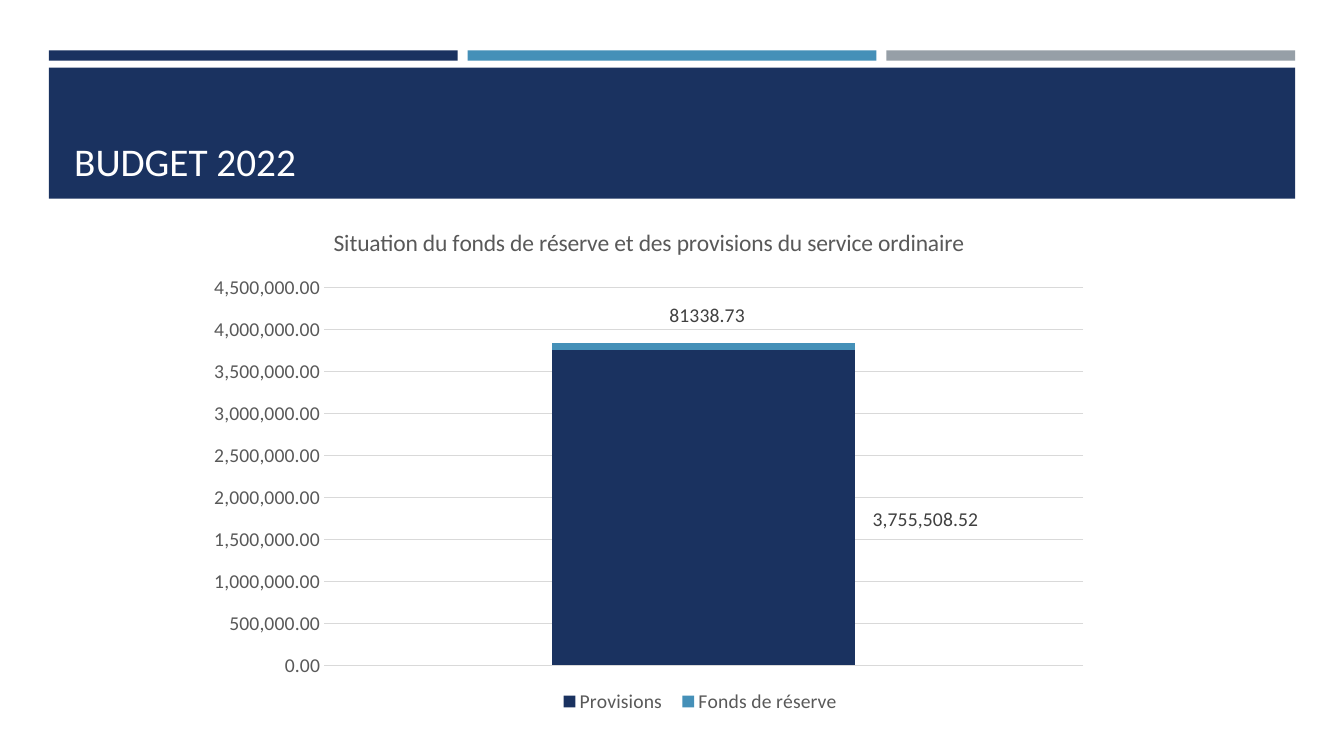
from lxml import etree
from pptx import Presentation
from pptx.chart.data import CategoryChartData
from pptx.dml.color import RGBColor
from pptx.enum.chart import XL_CHART_TYPE, XL_LEGEND_POSITION, XL_TICK_MARK
from pptx.enum.shapes import MSO_SHAPE
from pptx.enum.text import MSO_ANCHOR, MSO_AUTO_SIZE, PP_ALIGN
from pptx.oxml.ns import qn
from pptx.util import Pt

STACKED = XL_CHART_TYPE.COLUMN_STACKED
BOTTOM = XL_LEGEND_POSITION.BOTTOM
NO_TICK = XL_TICK_MARK.NONE
RECT = MSO_SHAPE.RECTANGLE
TEXT_LOW = MSO_ANCHOR.BOTTOM
NO_FIT = MSO_AUTO_SIZE.NONE
FLUSH = PP_ALIGN.LEFT

# Content
FONT = "Calibri"
COLORS = {"navy": "1A3260", "blue": "4590B8", "gray": "969FA7", "white": "FFFFFF",
          "text": "595959", "label": "404040", "grid": "D9D9D9"}
TITLE = "BUDGET 2022"
HEADING = "Situation du fonds de réserve et des provisions du service ordinaire"
# name, value, colour, label format, label shift (percent of chart width, height)
SERIES = [
    ("Provisions", 3755508.52, "navy", "#,##0.00", (24.5, 2.3)),
    ("Fonds de réserve", 81338.73, "blue", "General", (0.4, -6)),
]
STRIPES = ["navy", "blue", "gray"]

# Places in points; chart parts in percent of the chart
LEFT, WIDTH, GAP = 34.9, 890.3, 7.2
STRIPE_TOP, STRIPE_H = 36, 7.4
BAND_TOP, BAND_H = 48.4, 93.6
TITLE_BOX = (45.8, 55.4, 868.3, 79.9)
CHART_BOX = (139.7, 147.6, 647.3, 372.2)
PLOT = (14.2, 15.55, 83.75, 72.5)
LEGEND = (39.1, 92, 33.2, 6)


def rgb(name):
    return RGBColor.from_string(COLORS[name])


def style(font, size, color):
    font.name, font.size, font.bold = FONT, Pt(size), False
    font.color.rgb = rgb(color)


def block(x, y, w, h, color):
    shape = slide.shapes.add_shape(RECT, Pt(x), Pt(y), Pt(w), Pt(h))
    shape.shadow.inherit = False
    shape.fill.solid()
    shape.fill.fore_color.rgb = rgb(color)
    shape.line.fill.background()


def place(node, index, box, modes=()):
    """Give a chart part a manual layout."""
    for old in node.findall(qn("c:layout")):
        node.remove(old)
    layout = etree.Element(qn("c:layout"))
    manual = etree.SubElement(layout, qn("c:manualLayout"))
    shares = [(tag, share / 100) for tag, share in zip("xywh", box)]
    for tag, val in [*modes, *shares]:
        etree.SubElement(manual, qn("c:" + tag)).set("val", str(val))
    node.insert(index, layout)


deck = Presentation()
deck.slide_width, deck.slide_height = Pt(960), Pt(540)
slide = deck.slides.add_slide(deck.slide_layouts[5])

# Stripes and title band
step = (WIDTH + GAP) / len(STRIPES)
for i, color in enumerate(STRIPES):
    block(LEFT + i * step, STRIPE_TOP, step - GAP, STRIPE_H, color)
block(LEFT, BAND_TOP, WIDTH, BAND_H, "navy")

# Title, brought in front of the band
title = slide.shapes.title
title.left, title.top, title.width, title.height = map(Pt, TITLE_BOX)
slide.shapes._spTree.append(title._element)
text = title.text_frame
text.text = TITLE
text.auto_size = NO_FIT
text.vertical_anchor = TEXT_LOW
text.paragraphs[0].alignment = FLUSH
style(text.paragraphs[0].font, 28, "white")

# Chart
data = CategoryChartData()
data.categories = ["1"]
for name, value, _, form, _ in SERIES:
    data.add_series(name, [value], form)
chart = slide.shapes.add_chart(STACKED, *map(Pt, CHART_BOX), data).chart
style(chart.font, 14, "text")
chart.has_title = True
head = chart.chart_title.text_frame
head.text = HEADING
style(head.paragraphs[0].font, 16.8, "text")

# Axes
chart.category_axis.visible = False
axis = chart.value_axis
axis.minimum_scale, axis.maximum_scale, axis.major_unit = 0, 4500000, 500000
axis.major_tick_mark = axis.minor_tick_mark = NO_TICK
axis.format.line.fill.background()
axis.major_gridlines.format.line.color.rgb = rgb("grid")
axis.major_gridlines.format.line.width = Pt(0.75)
axis.tick_labels.number_format = "#,##0.00"
axis.tick_labels.number_format_is_linked = False
style(axis.tick_labels.font, 14, "text")

# Legend and plot area
chart.has_legend = True
chart.legend.position = BOTTOM
chart.legend.include_in_layout = False
style(chart.legend.font, 14, "text")
edges = [("xMode", "edge"), ("yMode", "edge")]
place(chart.legend._element, 1, LEGEND, edges)
area = chart._chartSpace.xpath("c:chart/c:plotArea")[0]
place(area, 0, PLOT, [("layoutTarget", "inner"), *edges])

# Columns and their shifted labels, without leader lines
plot = chart.plots[0]
plot.gap_width, plot.overlap, plot.vary_by_categories = 150, 100, False
for series, (_, _, color, form, shift) in zip(plot.series, SERIES):
    series.format.fill.solid()
    series.format.fill.fore_color.rgb = rgb(color)
    style(series.points[0].data_label.font, 14, "label")
    label = series._element.xpath("c:dLbls/c:dLbl")[0]
    place(label, 1, shift)
    number = etree.Element(qn("c:numFmt"), formatCode=form, sourceLinked="0")
    label.insert(2, number)
    for leader in series._element.xpath("c:dLbls/c:showLeaderLines"):
        leader.set("val", "0")

deck.save("out.pptx")
